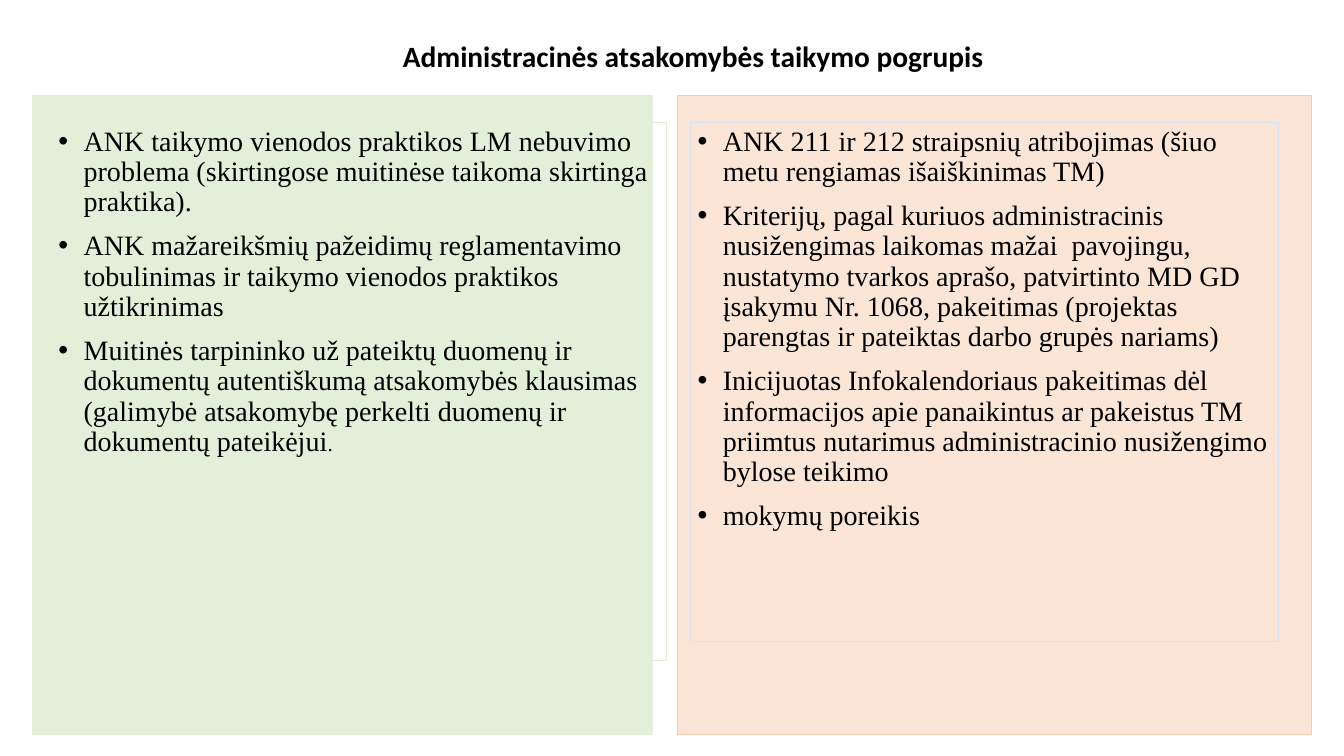
from pptx import Presentation
from pptx.dml.color import RGBColor
from pptx.enum.shapes import MSO_SHAPE
from pptx.enum.text import MSO_ANCHOR, PP_ALIGN
from pptx.oxml.ns import qn
from pptx.util import Pt
from lxml import etree

RECT = MSO_SHAPE.RECTANGLE
MIDDLE, TOP = MSO_ANCHOR.MIDDLE, MSO_ANCHOR.TOP
CENTER, LEFT = PP_ALIGN.CENTER, PP_ALIGN.LEFT

BLACK = RGBColor(0x00, 0x00, 0x00)
GREEN = RGBColor(0xE2, 0xF0, 0xD9)
PEACH = RGBColor(0xFB, 0xE5, 0xD6)
ORANGE = RGBColor(0xF8, 0xCB, 0xAD)
BLUE = RGBColor(0xDA, 0xE3, 0xF3)

# Content: each item is a list of (text, size) runs
TITLE = "Administracinės atsakomybės taikymo pogrupis"
ISSUES = [
    [("ANK taikymo vienodos praktikos LM nebuvimo problema "
      "(skirtingose muitinėse taikoma skirtinga praktika).", 20)],
    [("ANK mažareikšmių pažeidimų reglamentavimo tobulinimas ir taikymo "
      "vienodos praktikos užtikrinimas", 20)],
    [("Muitinės tarpininko už pateiktų duomenų ir dokumentų autentiškumą "
      "atsakomybės klausimas (galimybė atsakomybę perkelti duomenų ir "
      "dokumentų pateikėjui", 20), (".", 15)],
]
ACTIONS = [
    [("ANK 211 ir 212 straipsnių atribojimas (šiuo metu rengiamas "
      "išaiškinimas TM)", 20)],
    [("Kriterijų, pagal kuriuos administracinis nusižengimas laikomas mažai  "
      "pavojingu, nustatymo tvarkos aprašo, patvirtinto MD GD įsakymu "
      "Nr. 1068, pakeitimas (projektas parengtas ir pateiktas darbo grupės "
      "nariams)", 20)],
    [("Inicijuotas Infokalendoriaus pakeitimas dėl informacijos apie "
      "panaikintus ar pakeistus TM priimtus nutarimus administracinio "
      "nusižengimo bylose teikimo", 20)],
    [("mokymų poreikis", 20)],
]

# Layout in px, 100 to the inch
SCALE = 9144
WIDE, HIGH = 1333, 750
TITLE_BOX = (380, 21, 615, 74)
PANEL_TOP, PANEL_HIGH, TEXT_TOP = 95, 634, 122
INDENT = 25
COLUMNS = [
    {"panel": (32, 615), "fill": GREEN, "edge": GREEN,
     "text": (51, 610, 533), "frame": GREEN, "items": ISSUES},
    {"panel": (672, 629), "fill": PEACH, "edge": ORANGE,
     "text": (685, 583, 514), "frame": BLUE, "items": ACTIONS},
]


def px(*sizes):
    return [size * SCALE for size in sizes]


def assign(target, values):
    for name, value in values.items():
        setattr(target, name, value)


def set_frame(frame, anchor):
    side, edge = px(7, 4)
    assign(frame, {"word_wrap": True, "vertical_anchor": anchor,
                   "margin_left": side, "margin_right": side,
                   "margin_top": edge, "margin_bottom": edge})


def add_run(para, text, size, face, bold=False):
    run = para.add_run()
    run.text = text
    assign(run.font, {"size": Pt(size), "name": face, "bold": bold})
    run.font.color.rgb = BLACK


def add_box(slide, box, fill, edge, weight):
    shape = slide.shapes.add_shape(RECT, *px(*box))
    shape.shadow.inherit = False
    if fill is None:
        shape.fill.background()
    else:
        shape.fill.solid()
        shape.fill.fore_color.rgb = fill
    shape.line.color.rgb = edge
    shape.line.width = Pt(weight)
    return shape


def add_list(frame, items):
    set_frame(frame, TOP)
    for index, runs in enumerate(items):
        para = frame.add_paragraph() if index else frame.paragraphs[0]
        assign(para, {"alignment": LEFT, "line_spacing": 0.9,
                      "space_before": Pt(10)})
        props = para._p.get_or_add_pPr()
        props.set("marL", str(INDENT * SCALE))
        props.set("indent", str(-INDENT * SCALE))
        etree.SubElement(props, qn("a:buFont")).set("typeface", "Arial")
        etree.SubElement(props, qn("a:buChar")).set("char", "•")
        for text, size in runs:
            add_run(para, text, size, "Times New Roman")


def main():
    deck = Presentation()
    deck.slide_width, deck.slide_height = px(WIDE, HIGH)
    slide = deck.slides.add_slide(deck.slide_layouts[6])

    # Title
    frame = slide.shapes.add_textbox(*px(*TITLE_BOX)).text_frame
    set_frame(frame, MIDDLE)
    para = frame.paragraphs[0]
    assign(para, {"alignment": CENTER, "line_spacing": 0.9})
    add_run(para, TITLE, 21, "Calibri", True)

    # Coloured panels with framed lists
    for col in COLUMNS:
        left, width = col["panel"]
        add_box(slide, (left, PANEL_TOP, width, PANEL_HIGH),
                col["fill"], col["edge"], 1)
        left, width, height = col["text"]
        box = add_box(slide, (left, TEXT_TOP, width, height),
                      None, col["frame"], 0.75)
        add_list(box.text_frame, col["items"])

    deck.save("out.pptx")


if __name__ == "__main__":
    main()
